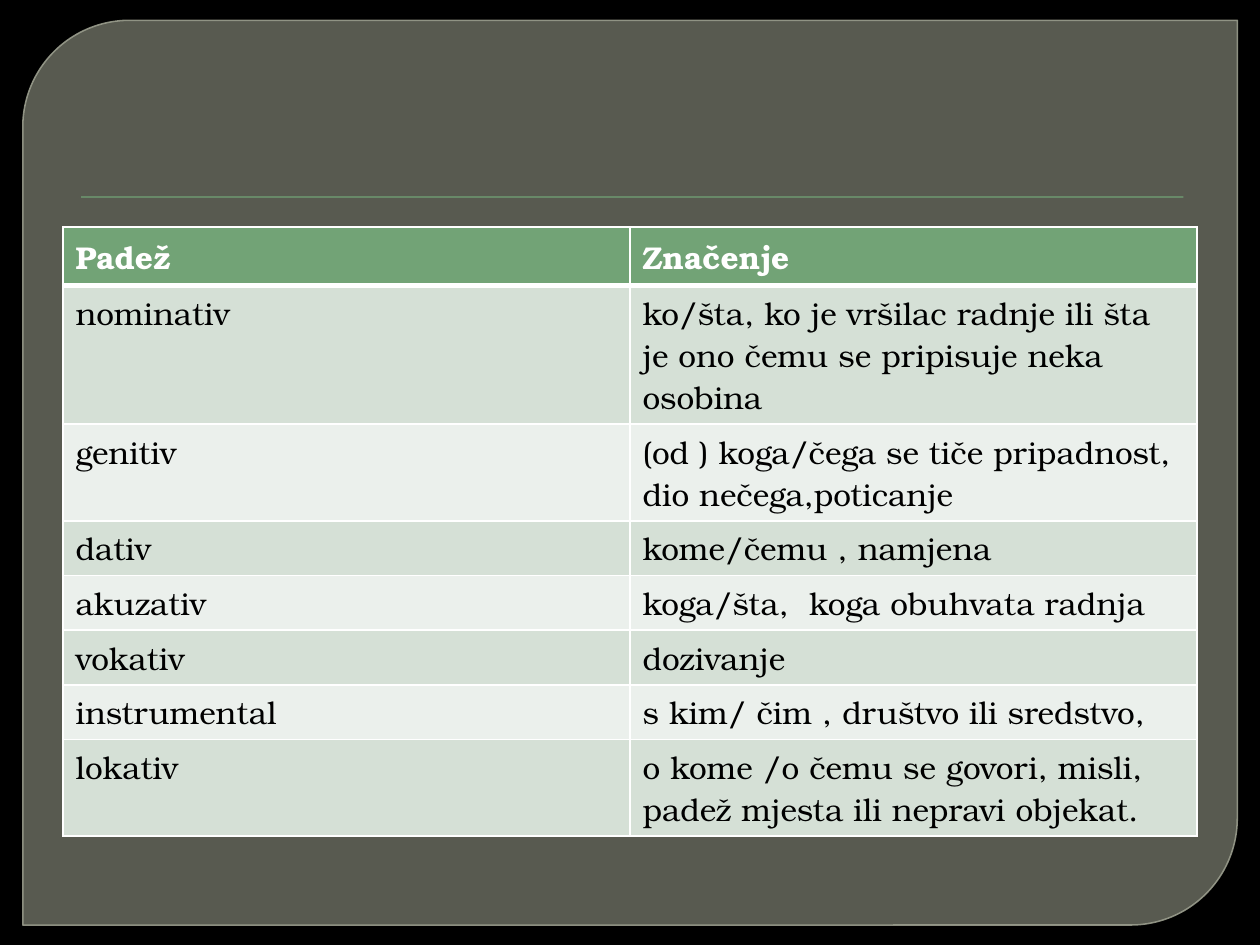
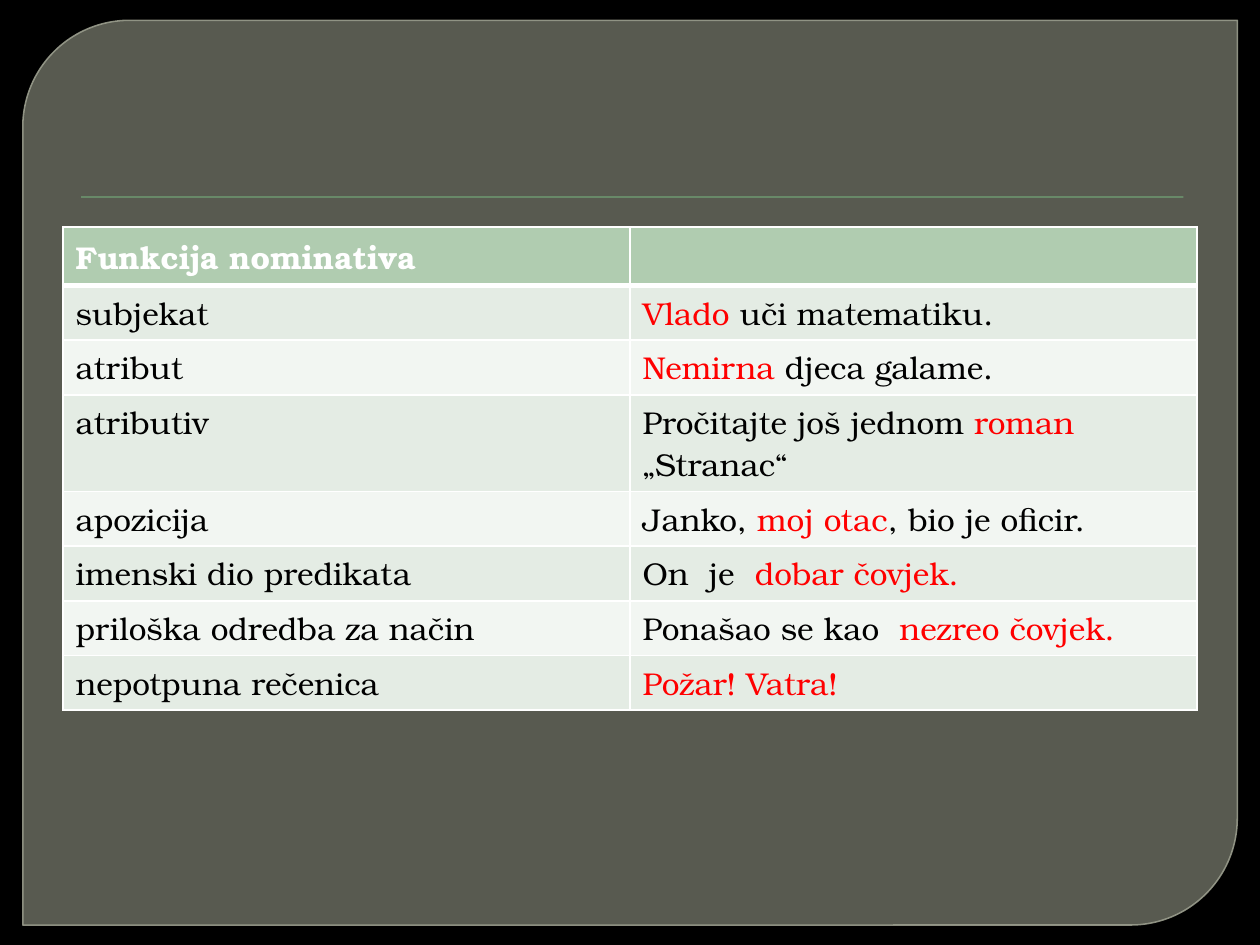
from dataclasses import dataclass

import pptx
import pptx.dml.color
import pptx.enum.shapes
import pptx.oxml
import pptx.oxml.ns
import pptx.util
from pptx.util import Pt

FONT = "TeX Gyre Bonum"
TEXT_SIZE = Pt(18)
ROW_HEIGHT = Pt(29.2)
COLUMN_WIDTH = Pt(324)
TABLE_LEFT, TABLE_TOP = Pt(36), Pt(129.6)
THIN, THICK = Pt(1), Pt(3)

COLORS = {
    "background": "000000",
    "panel": "888B7B",
    "panel_line": "9DA090",
    "accent": "72A376",
    "border": "FFFFFF",
    "header_text": "FFFFFF",
    "text": "000000",
    "highlight": "FF0000",
}


@dataclass(frozen=True)
class Segment:
    text: str
    color: str = "text"


@dataclass(frozen=True)
class CaseTable:
    header: tuple[str, str]
    rows: list[tuple[str, list[Segment]]]
    header_fill: str
    band_fills: tuple[str, str]


def plain(text: str) -> list[Segment]:
    return [Segment(text)]


def red(text: str) -> Segment:
    return Segment(text, "highlight")


CASES = CaseTable(
    header=("Padež", "Značenje"),
    rows=[
        ("nominativ", plain("ko/šta, ko je vršilac radnje ili šta je ono čemu se pripisuje neka osobina")),
        ("genitiv", plain("(od ) koga/čega se tiče pripadnost, dio nečega,poticanje")),
        ("dativ", plain("kome/čemu , namjena")),
        ("akuzativ", plain("koga/šta,  koga obuhvata radnja")),
        ("vokativ", plain("dozivanje")),
        ("instrumental", plain("s kim/ čim , društvo ili sredstvo,")),
        ("lokativ", plain("o kome /o čemu se govori, misli, padež mjesta ili nepravi objekat.")),
    ],
    header_fill="72A376",
    band_fills=("D5E0D6", "EBF0EC"),
)

NOMINATIVE = CaseTable(
    header=("Funkcija nominativa", ""),
    rows=[
        ("subjekat", [red("Vlado"), Segment(" uči matematiku.")]),
        ("atribut", [red("Nemirna"), Segment(" djeca galame.")]),
        ("atributiv", [Segment("Pročitajte još jednom"), red(" roman "), Segment("„Stranac“")]),
        ("apozicija", [Segment("Janko, "), red("moj otac"), Segment(", bio je oficir.")]),
        ("imenski dio predikata", [Segment("On  je  "), red("dobar čovjek.")]),
        ("priloška odredba za način", [Segment("Ponašao se kao  "), red("nezreo čovjek.")]),
        ("nepotpuna rečenica", [red("Požar! Vatra!")]),
    ],
    header_fill="B0CCB0",
    band_fills=("E4ECE4", "F2F6F2"),
)


def rgb(value: str) -> pptx.dml.color.RGBColor:
    return pptx.dml.color.RGBColor.from_string(value)


def paint(fill, value: str, opacity: int = 100) -> None:
    """Fill with a solid colour, optionally see-through."""
    fill.solid()
    fill.fore_color.rgb = rgb(value)
    if opacity < 100:
        color = fill._xPr.find(".//" + pptx.oxml.ns.qn("a:srgbClr"))
        alpha = pptx.oxml.parse_xml(f'<a:alpha {pptx.oxml.ns.nsdecls("a")} val="{opacity * 1000}"/>')
        color.append(alpha)


def draw_frame(slide) -> None:
    """Draw the rounded panel and the thin rule of every slide."""
    shape_kinds = pptx.enum.shapes.MSO_SHAPE
    panel = slide.shapes.add_shape(
        shape_kinds.ROUND_2_DIAG_RECTANGLE, Pt(13), Pt(11.6), Pt(694), Pt(517))
    panel.adjustments[0] = 0.118
    panel.adjustments[1] = 0
    panel.shadow.inherit = False
    paint(panel.fill, COLORS["panel"], 65)
    panel.line.width = Pt(0.87)
    paint(panel.line.fill, COLORS["panel_line"], 88)

    rule = slide.shapes.add_shape(
        shape_kinds.RECTANGLE, Pt(46.3), Pt(112.2), Pt(630), Pt(0.72))
    paint(rule.fill, COLORS["accent"])
    rule.line.fill.background()
    rule.shadow.inherit = False
    effects = rule._element.spPr.find(pptx.oxml.ns.qn("a:effectLst"))
    effects.append(pptx.oxml.parse_xml(
        f'<a:outerShdw {pptx.oxml.ns.nsdecls("a")} blurRad="{Pt(1)}" dist="{Pt(1)}" dir="5400000">'
        f'<a:srgbClr val="{COLORS["background"]}"><a:alpha val="75000"/></a:srgbClr></a:outerShdw>'))


def set_borders(cell, top: int, bottom: int) -> None:
    """Put the four border lines ahead of the cell fill."""
    widths = {"lnL": THIN, "lnR": THIN, "lnT": top, "lnB": bottom}
    properties = cell._tc.get_or_add_tcPr()
    for position, (side, width) in enumerate(widths.items()):
        properties.insert(position, pptx.oxml.parse_xml(
            f'<a:{side} {pptx.oxml.ns.nsdecls("a")} w="{width}"><a:solidFill>'
            f'<a:srgbClr val="{COLORS["border"]}"/></a:solidFill></a:{side}>'))


def write_cell(cell, segments: list[Segment], bold: bool) -> None:
    paragraph = cell.text_frame.paragraphs[0]
    paragraph.font.size = TEXT_SIZE
    for segment in segments:
        run = paragraph.add_run()
        run.text = segment.text
        run.font.name = FONT
        run.font.size = TEXT_SIZE
        run.font.bold = bold
        run.font.color.rgb = rgb(COLORS[segment.color])


def draw_table(slide, content: CaseTable) -> None:
    header = [[Segment(text, "header_text")] if text else [] for text in content.header]
    rows = [header] + [[plain(label), segments] for label, segments in content.rows]
    table = slide.shapes.add_table(
        len(rows), 2, TABLE_LEFT, TABLE_TOP, 2 * COLUMN_WIDTH, len(rows) * ROW_HEIGHT).table
    for row_index, row in enumerate(rows):
        is_header = row_index == 0
        fill = content.header_fill if is_header else content.band_fills[(row_index - 1) % 2]
        for column_index, segments in enumerate(row):
            cell = table.cell(row_index, column_index)
            write_cell(cell, segments, is_header)
            paint(cell.fill, fill)
            set_borders(cell, top=THICK if row_index == 1 else THIN,
                        bottom=THICK if is_header else THIN)


def main() -> None:
    presentation = pptx.Presentation()
    presentation.slide_width, presentation.slide_height = Pt(720), Pt(540)
    paint(presentation.slide_master.background.fill, COLORS["background"])
    blank_layout = presentation.slide_layouts[6]
    for content in (CASES, NOMINATIVE):
        slide = presentation.slides.add_slide(blank_layout)
        draw_frame(slide)
        draw_table(slide, content)
    presentation.save("out.pptx")


if __name__ == "__main__":
    main()
